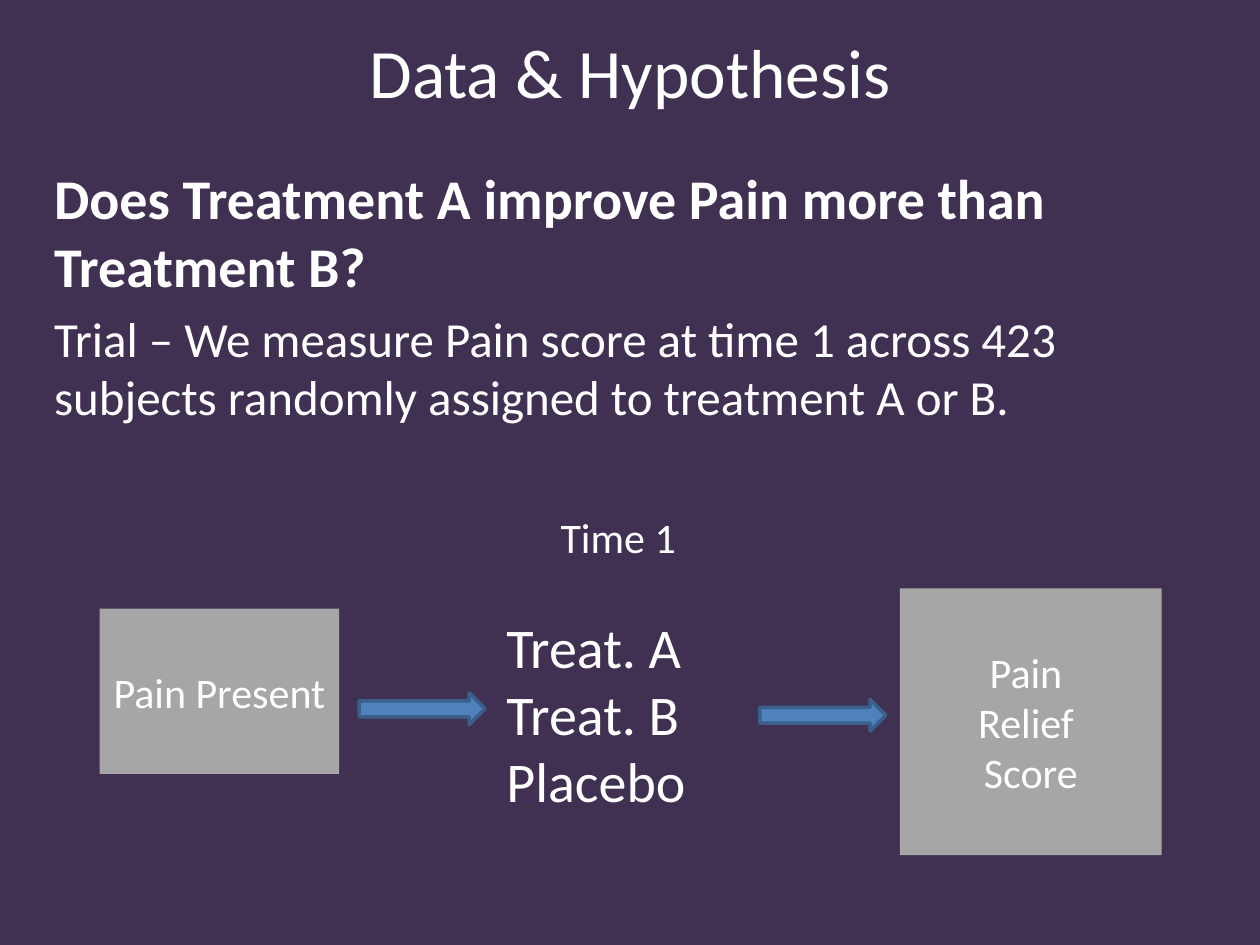
from dataclasses import dataclass

from pptx import Presentation
from pptx.dml.color import RGBColor
from pptx.enum.shapes import MSO_SHAPE
from pptx.enum.text import MSO_ANCHOR, PP_ALIGN
from pptx.slide import Slide
from pptx.util import Cm, Pt

RECTANGLE = MSO_SHAPE.RECTANGLE
RIGHT_ARROW = MSO_SHAPE.RIGHT_ARROW
TOP, MIDDLE = MSO_ANCHOR.TOP, MSO_ANCHOR.MIDDLE
LEFT, CENTER = PP_ALIGN.LEFT, PP_ALIGN.CENTER


def color(value):
    """Turn a hex string into a colour."""
    return RGBColor.from_string(value)


@dataclass
class SlideBuilder:
    """Hold the style and the slide, and add elements to it."""

    slide: Slide
    font: str = "Calibri"
    background: str = "403152"
    text_color: str = "FFFFFF"
    box_fill: str = "A6A6A6"
    arrow_fill: str = "4F81BD"
    arrow_line: str = "3A5F8C"

    def paint_background(self):
        """Fill the slide background."""
        fill = self.slide.background.fill
        fill.solid()
        fill.fore_color.rgb = color(self.background)

    def add_lines(self, shape, lines, align=LEFT, anchor=TOP, wrap=True, spacing=0):
        """Add (text, size, bold) lines, spaced by a share of their size."""
        frame = shape.text_frame
        frame.word_wrap = wrap
        frame.vertical_anchor = anchor
        for index, (text, size, bold) in enumerate(lines):
            paragraph = frame.add_paragraph() if index else frame.paragraphs[0]
            paragraph.alignment = align
            paragraph.space_before = Pt(size * spacing)
            run = paragraph.add_run()
            run.text = text
            run.font.name = self.font
            run.font.size = Pt(size)
            run.font.bold = bold
            run.font.color.rgb = color(self.text_color)

    def text(self, place, lines, **options):
        """Add a text box."""
        shape = self.slide.shapes.add_textbox(*map(Cm, place))
        self.add_lines(shape, lines, **options)

    def shape(self, kind, place, fill):
        """Add a filled preset shape without outline or shadow."""
        shape = self.slide.shapes.add_shape(kind, *map(Cm, place))
        shape.shadow.inherit = False
        shape.fill.solid()
        shape.fill.fore_color.rgb = color(fill)
        shape.line.fill.background()
        return shape

    def box(self, place, lines, wrap=True):
        """Add a grey box with centred text."""
        shape = self.shape(RECTANGLE, place, self.box_fill)
        self.add_lines(shape, lines, CENTER, MIDDLE, wrap)

    def arrow(self, left, top):
        """Add an outlined block arrow pointing right."""
        shape = self.shape(RIGHT_ARROW, (left, top, 2.54, 0.64), self.arrow_fill)
        shape.line.color.rgb = color(self.arrow_line)
        shape.line.width = Pt(2)


def main():
    """Build and save the slide."""
    presentation = Presentation()
    presentation.slide_width = Cm(25.4)
    presentation.slide_height = Cm(19.05)
    builder = SlideBuilder(presentation.slides.add_slide(presentation.slide_layouts[6]))
    builder.paint_background()

    builder.text((1.27, 0.43, 22.86, 1.98), [("Data & Hypothesis", 39.6, False)],
                 align=CENTER, anchor=MIDDLE)
    builder.text((0.84, 3.18, 23.93, 6.99), [
        ("Does Treatment A improve Pain more than Treatment B?", 32, True),
        ("Trial – We measure Pain score at time 1 across 423 subjects "
         "randomly assigned to treatment A or B.", 28, False),
    ], spacing=0.2)

    treatments = [(name, 32, False) for name in ("Treat. A", "Treat. B", "Placebo")]
    builder.text((9.96, 12.22, 4.17, 4.37), treatments, wrap=False)
    builder.text((11.05, 10.19, 2.87, 1.27), [("Time 1", 24, False)], wrap=False)

    builder.box((2.01, 12.27, 4.83, 3.33), [("Pain Present", 24, False)], wrap=False)
    builder.arrow(7.24, 13.97)
    builder.arrow(15.32, 14.1)
    outcome = [(word, 24, False) for word in ("Pain ", "Relief ", "Score")]
    builder.box((18.14, 11.86, 5.28, 5.38), outcome)

    presentation.save("out.pptx")


if __name__ == "__main__":
    main()
